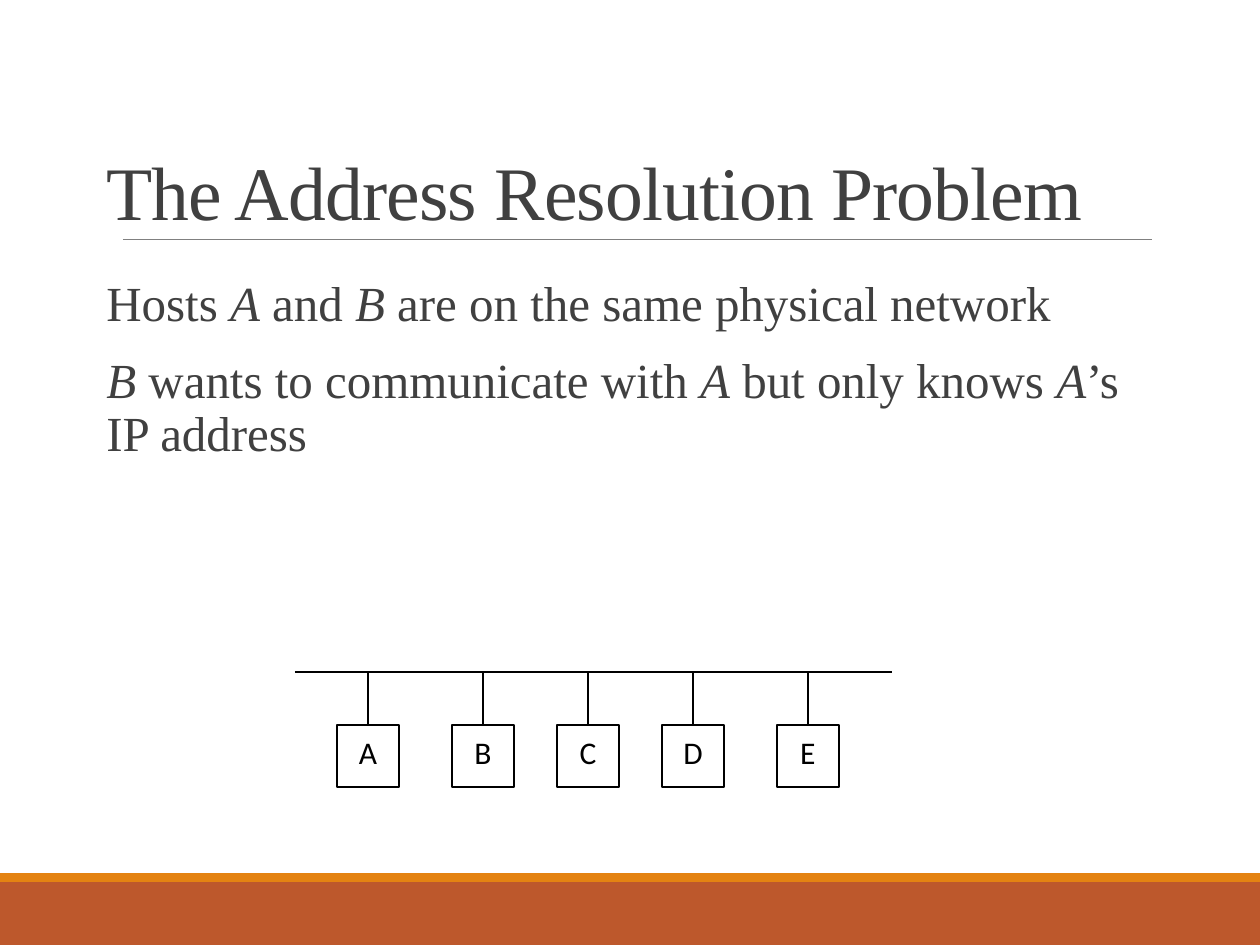
from pptx import Presentation
from pptx.dml.color import RGBColor
from pptx.enum.shapes import MSO_CONNECTOR as Connector, MSO_SHAPE as Shape
from pptx.enum.text import MSO_ANCHOR as Anchor, PP_ALIGN as Align
from pptx.oxml.ns import qn
from pptx.util import Pt
from lxml.etree import SubElement

EMU_PER_PX = 914400 / 126
COLORS = {"band": "BD582C", "stripe": "E48312", "rule": "808080",
          "text": "404040", "ink": "000000"}
TITLE_FONT = {"name": "Times New Roman", "size": Pt(43.2)}
BODY_FONT = {"name": "Times New Roman", "size": Pt(28)}
HOST_FONT = {"name": "Calibri", "size": Pt(18)}


def px(value):
    return round(value * EMU_PER_PX)


def rgb(name):
    return RGBColor.from_string(COLORS[name])


def set_attributes(target, values):
    for name, value in values.items():
        setattr(target, name, value)


def add_run(paragraph, text, font, color):
    run = paragraph.add_run()
    run.text = text
    set_attributes(run.font, font)
    run.font.color.rgb = rgb(color)
    return run


def add_rectangle(slide, box, fill=None, line=None):
    shape = slide.shapes.add_shape(Shape.RECTANGLE, *map(px, box))
    shape.shadow.inherit = False
    if fill:
        shape.fill.solid()
        shape.fill.fore_color.rgb = rgb(fill)
    else:
        shape.fill.background()
    if line:
        shape.line.color.rgb = rgb(line)
        shape.line.width = Pt(1)
    else:
        shape.line.fill.background()
    return shape


def add_line(slide, start, end, color, width):
    line = slide.shapes.add_connector(Connector.STRAIGHT, *map(px, start + end))
    line.line.color.rgb = rgb(color)
    line.line.width = Pt(width)
    SubElement(line._element.spPr, qn("a:effectLst"))
    return line


def add_text_frame(slide, box, anchor):
    frame = slide.shapes.add_textbox(*map(px, box)).text_frame
    set_attributes(frame, {"word_wrap": True, "vertical_anchor": anchor})
    return frame


def add_footer(slide, box):
    left, top, width, height = box
    stripe = 9
    add_rectangle(slide, (left, top + stripe, width, height - stripe), "band")
    add_rectangle(slide, (left, top, width, stripe), "stripe")


def add_title(slide, box, text):
    left, top, width, height = box
    rule_y = top + height - 3
    add_line(slide, (left + 29, rule_y), (left + 1058, rule_y), "rule", 0.5)
    paragraph = add_text_frame(slide, box, Anchor.BOTTOM).paragraphs[0]
    paragraph.line_spacing = 0.85
    run = add_run(paragraph, text, TITLE_FONT, "text")
    run.font._element.set("spc", "-50")


def add_body(slide, box, paragraphs):
    """Each paragraph is a list of pieces; host names are set in italics."""
    frame = add_text_frame(slide, box, Anchor.TOP)
    for index, pieces in enumerate(paragraphs):
        paragraph = frame.add_paragraph() if index else frame.paragraphs[0]
        set_attributes(paragraph, {"line_spacing": 0.9, "space_after": Pt(2),
                                   "space_before": Pt(12 if index else 0)})
        for piece in pieces:
            font = {**BODY_FONT, "italic": piece in ("A", "B")}
            add_run(paragraph, piece, font, "text")


def add_network(slide, box, hosts):
    """A bus along the top, with hosts hanging from it at given offsets."""
    left, top, width, height = box
    size = 62
    add_line(slide, (left, top), (left + width, top), "ink", 1)
    for name, offset in hosts.items():
        x, y = left + offset, top + height - size
        host = add_rectangle(slide, (x, y, size, size), line="ink")
        frame = host.text_frame
        set_attributes(frame, {"margin_left": 0, "margin_right": 0,
                               "margin_top": 0, "margin_bottom": px(8),
                               "vertical_anchor": Anchor.MIDDLE})
        frame.paragraphs[0].alignment = Align.CENTER
        add_run(frame.paragraphs[0], name, HOST_FONT, "ink")
        center = x + size // 2
        stem = add_line(slide, (center, y), (center, top - 1), "ink", 1)
        stem.begin_connect(host, 0)


def main():
    presentation = Presentation()
    presentation.slide_width, presentation.slide_height = px(1260), px(945)
    slide = presentation.slides.add_slide(presentation.slide_layouts[6])

    # Footer bands
    add_footer(slide, (0, 873, 1260, 72))

    # Title and rule
    add_title(slide, (94, 84, 1071, 158), "The Address Resolution Problem")

    # Statement of the problem
    add_body(slide, (94, 273, 1071, 567), [
        ["Hosts ", "A", " and ", "B", " are on the same physical network"],
        ["B", " wants to communicate with ", "A", " but only knows ", "A",
         "’s IP address"],
    ])

    # Network diagram
    add_network(slide, (295, 672, 597, 115),
                {"A": 42, "B": 157, "C": 262, "D": 367, "E": 482})

    presentation.save("out.pptx")


if __name__ == "__main__":
    main()
